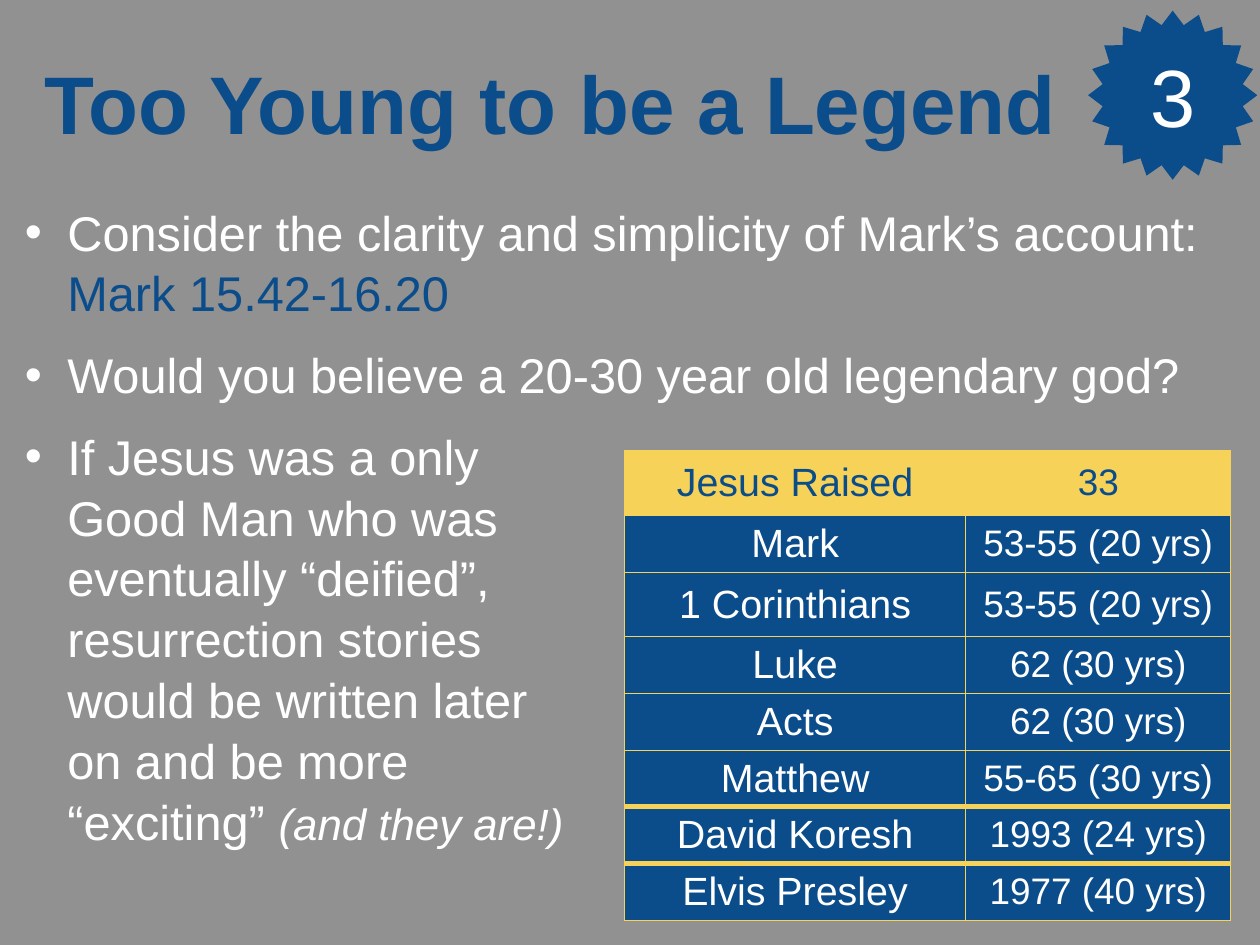
from math import cos, pi, sin
from lxml import etree
from pptx import Presentation
from pptx import util as u
from pptx.dml.color import RGBColor
from pptx.enum import text
from pptx.oxml.ns import qn

BLUE, GOLD, WHITE = "0B4C8A", "F6D258", "FFFFFF"
PAD = u.Inches(0.06)


def style(run, size, tint, bold=False, slant=False):
    font = run.font
    font.name, font.size = "Arial", u.Pt(size)
    font.bold, font.italic = bold, slant
    font.color.rgb = RGBColor.from_string(tint)


def inset(item, anchor):
    item.margin_left = item.margin_right = PAD
    item.margin_top = item.margin_bottom = PAD
    item.vertical_anchor = anchor


deck = Presentation()
deck.slide_width, deck.slide_height = u.Inches(14.22), u.Inches(10.67)
slide = deck.slides.add_slide(deck.slide_layouts[1])
slide.background.fill.solid()
slide.background.fill.fore_color.rgb = RGBColor.from_string("919191")

# Title and body places
title, body = slide.shapes.title, slide.placeholders[1]
for shape, box, anchor in (
    (title, (0.32, 0.03, 11.78, 2.25), text.MSO_ANCHOR.MIDDLE),
    (body, (0.22, 2.2, 13.65, 8.26), text.MSO_ANCHOR.TOP),
):
    shape.left, shape.top, shape.width, shape.height = map(u.Inches, box)
    inset(shape.text_frame, anchor)
    shape.text_frame.word_wrap = True
    shape.text_frame.auto_size = text.MSO_AUTO_SIZE.NONE

title.text_frame.text = "Too Young to be a Legend"
head = title.text_frame.paragraphs[0]
head.alignment = text.PP_ALIGN.CENTER
style(head.runs[0], 66.4, BLUE, bold=True)

# Bullets: main words, then a tail with its own size, colour and slant
points = (
    ("Consider the clarity and simplicity of Mark’s account: ",
     "Mark 15.42-16.20", 39.6, BLUE, False),
    ("Would you believe a 20-30 year old legendary god?", "", 0, WHITE, False),
    ("If Jesus was a only\nGood Man who was\neventually “deified”,\n"
     "resurrection stories\nwould be written later\non and be more\n“exciting” ",
     "(and they are!)", 35.6, WHITE, True),
)
frame = body.text_frame
for i, (words, tail, size, tint, slant) in enumerate(points):
    para = frame.add_paragraph() if i else frame.paragraphs[0]
    para.text = words.replace("\n", "\v")
    para.space_before, para.line_spacing = u.Pt(17), 1.04
    props = para._p.get_or_add_pPr()
    props.set("marL", str(u.Inches(0.48)))
    props.set("indent", str(-u.Inches(0.48)))
    for run in para.runs:
        style(run, 39.6, WHITE)
    if tail:
        run = para.add_run()
        run.text = tail
        style(run, size, tint, slant=slant)

# Table of dates
rows = (
    ("Jesus Raised", "33"),
    ("Mark", "53-55 (20 yrs)"),
    ("1 Corinthians", "53-55 (20 yrs)"),
    ("Luke", "62 (30 yrs)"),
    ("Acts", "62 (30 yrs)"),
    ("Matthew", "55-65 (30 yrs)"),
    ("David Koresh", "1993 (24 yrs)"),
    ("Elvis Presley", "1977 (40 yrs)"),
)
thick = {(5, "B"), (6, "T"), (6, "B"), (7, "T")}
table = slide.shapes.add_table(len(rows), 2, u.Inches(7.05), u.Inches(5.09),
                               u.Inches(6.84), u.Inches(5.3)).table
table.first_row = table.horz_banding = False
for col, width in zip(table.columns, (3.85, 2.99)):
    col.width = u.Inches(width)
for r, row in enumerate(rows):
    table.rows[r].height = u.Inches(0.73 if r in (0, 2) else 0.64)
    for c, words in enumerate(row):
        cell = table.cell(r, c)
        inset(cell, text.MSO_ANCHOR.MIDDLE)
        cell.text_frame.text = words
        para = cell.text_frame.paragraphs[0]
        para.alignment = text.PP_ALIGN.CENTER
        style(para.runs[0], (32, 30)[c], WHITE if r else BLUE)
        # Borders come before the fill in the cell's XML
        props = cell._tc.get_or_add_tcPr()
        for side in "LRTB":
            line = etree.SubElement(props, qn("a:ln" + side))
            line.set("w", str(u.Pt(5 if (r, side) in thick else 0.75)))
            fill = etree.SubElement(line, qn("a:solidFill"))
            etree.SubElement(fill, qn("a:srgbClr")).set("val", GOLD)
        cell.fill.solid()
        cell.fill.fore_color.rgb = RGBColor.from_string(BLUE if r else GOLD)

# Number badge: a star with twenty points
spots = []
for i in range(40):
    turn, reach = i * pi / 20, 0.8 if i % 2 else 0.955
    spots.append((u.Inches(13.235 + reach * sin(turn)),
                  u.Inches(1.075 - reach * cos(turn))))
pen = slide.shapes.build_freeform(*spots[0])
pen.add_line_segments(spots[1:], close=True)
badge = pen.convert_to_shape()
badge.shadow.inherit = False
badge.fill.solid()
badge.fill.fore_color.rgb = RGBColor.from_string(BLUE)
badge.line.fill.background()
inset(badge.text_frame, text.MSO_ANCHOR.MIDDLE)
badge.text_frame.text = "3"
mark = badge.text_frame.paragraphs[0]
mark.alignment = text.PP_ALIGN.CENTER
style(mark.runs[0], 66, WHITE)

deck.save("out.pptx")
